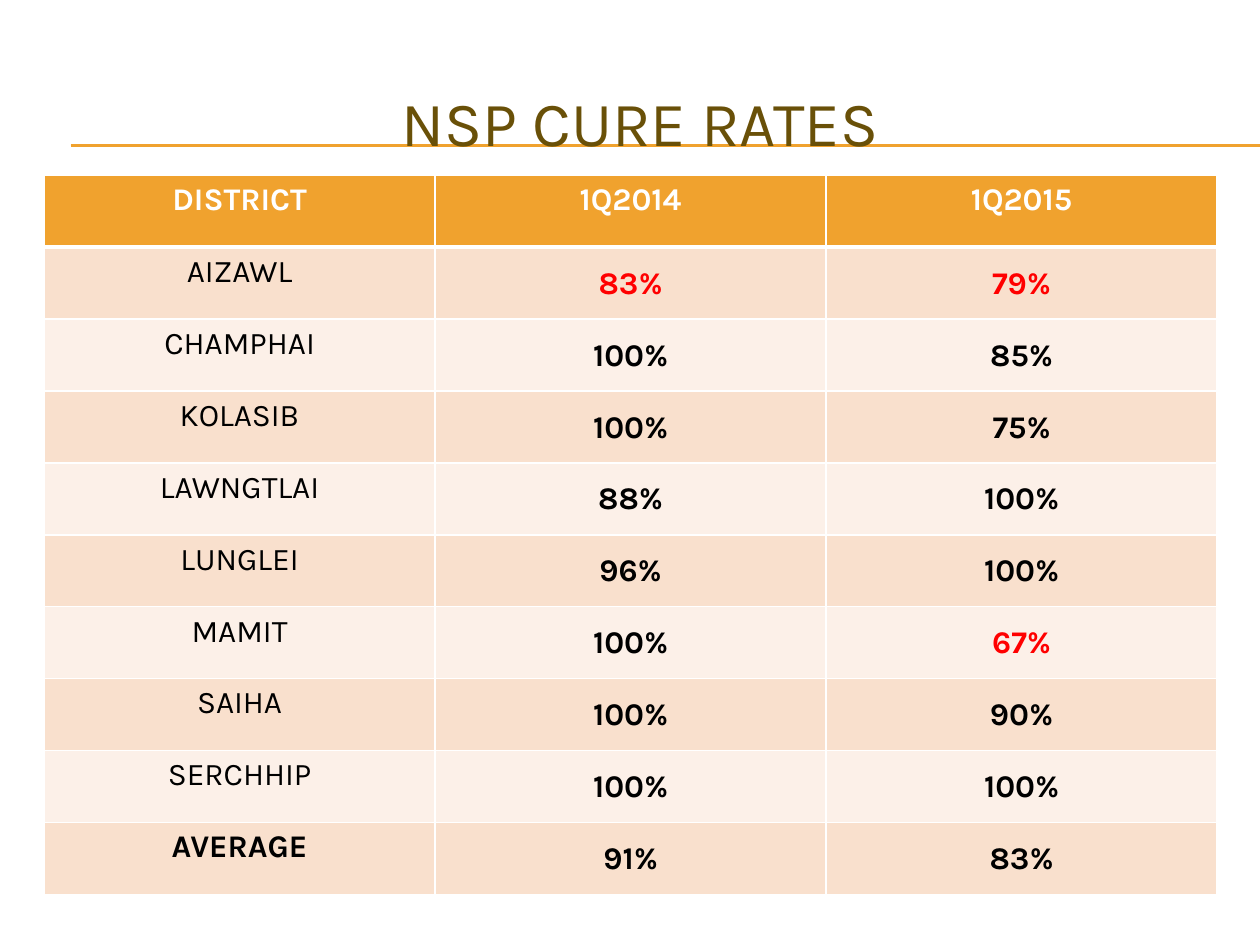
from lxml.etree import SubElement
from pptx import Presentation
from pptx.dml.color import RGBColor
from pptx.enum.shapes import MSO_CONNECTOR as Connector
from pptx.enum.text import MSO_ANCHOR as Anchor, PP_ALIGN as Align
from pptx.oxml.ns import qn
from pptx.util import Inches, Pt

FONT = "Karla"
GOLD, WHITE, BLACK, RED, BROWN = "F0A22E", "FFFFFF", "000000", "FF0000", "695008"
BANDS = ["FCF0E8", "F9E0CD"]
TITLE = "NSP CURE RATES"
RATES = [
    ("DISTRICT", "1Q2014", "1Q2015"),
    ("AIZAWL", "83%", "79%"),
    ("CHAMPHAI", "100%", "85%"),
    ("KOLASIB", "100%", "75%"),
    ("LAWNGTLAI", "88%", "100%"),
    ("LUNGLEI", "96%", "100%"),
    ("MAMIT", "100%", "67%"),
    ("SAIHA", "100%", "90%"),
    ("SERCHHIP", "100%", "100%"),
    ("AVERAGE", "91%", "83%"),
]
LOW_RATES = {(1, 1), (1, 2), (6, 2)}
RULE_HEIGHTS = [1.15, 1.16]


def rgb(value):
    return RGBColor.from_string(value)


def style(para, size, color, bold=False):
    para.alignment = Align.CENTER
    para.font.name, para.font.size, para.font.bold = FONT, Pt(size), bold
    para.font.color.rgb = rgb(color)


def add_rule(page, title, top):
    rule = page.shapes.add_connector(
        Connector.STRAIGHT, Inches(0.56), Inches(top), Inches(10), Inches(top))
    rule.line.color.rgb, rule.line.width = rgb(GOLD), Pt(0.75)
    SubElement(rule.element.spPr, qn("a:effectLst"))
    title.element.addprevious(rule.element)


def add_borders(cell, top, bottom):
    properties = cell._tc.get_or_add_tcPr()
    for side, width in (("L", 1), ("R", 1), ("T", top), ("B", bottom)):
        border = SubElement(properties, qn(f"a:ln{side}"), w=str(Pt(width)))
        fill = SubElement(border, qn("a:solidFill"))
        SubElement(fill, qn("a:srgbClr"), val=WHITE)


def fill_cell(cell, text, row, column):
    header, average = row == 0, row == len(RATES) - 1
    add_borders(cell, 3 if row == 1 else 1, 3 if header else 1)
    cell.fill.solid()
    cell.fill.fore_color.rgb = rgb(GOLD if header else BANDS[row % 2])
    cell.text = text
    color = WHITE if header else RED if (row, column) in LOW_RATES else BLACK
    style(cell.text_frame.paragraphs[0], 18, color, header or average or column > 0)
    if column and not header:
        cell.vertical_anchor = Anchor.MIDDLE
        cell.margin_left = cell.margin_right = cell.margin_top = Inches(0.01)
        cell.margin_bottom = 0


def main():
    """Build the slide of cure rates by district."""
    deck = Presentation()
    deck.slide_width, deck.slide_height = Inches(10), Inches(7.5)
    page = deck.slides.add_slide(deck.slide_layouts[5])

    title = page.shapes.title
    title.left, title.top, title.width, title.height = map(Inches, (0.33, 0.5, 9.5, 0.92))
    title.text_frame.text = TITLE
    title.text_frame.vertical_anchor = Anchor.MIDDLE
    style(title.text_frame.paragraphs[0], 36, BROWN)
    for top in RULE_HEIGHTS:
        add_rule(page, title, top)

    table = page.shapes.add_table(
        len(RATES), len(RATES[0]),
        Inches(0.35), Inches(1.39), Inches(9.31), Inches(5.71)).table
    for row, texts in enumerate(RATES):
        for column, text in enumerate(texts):
            fill_cell(table.cell(row, column), text, row, column)

    deck.save("out.pptx")


if __name__ == "__main__":
    main()
